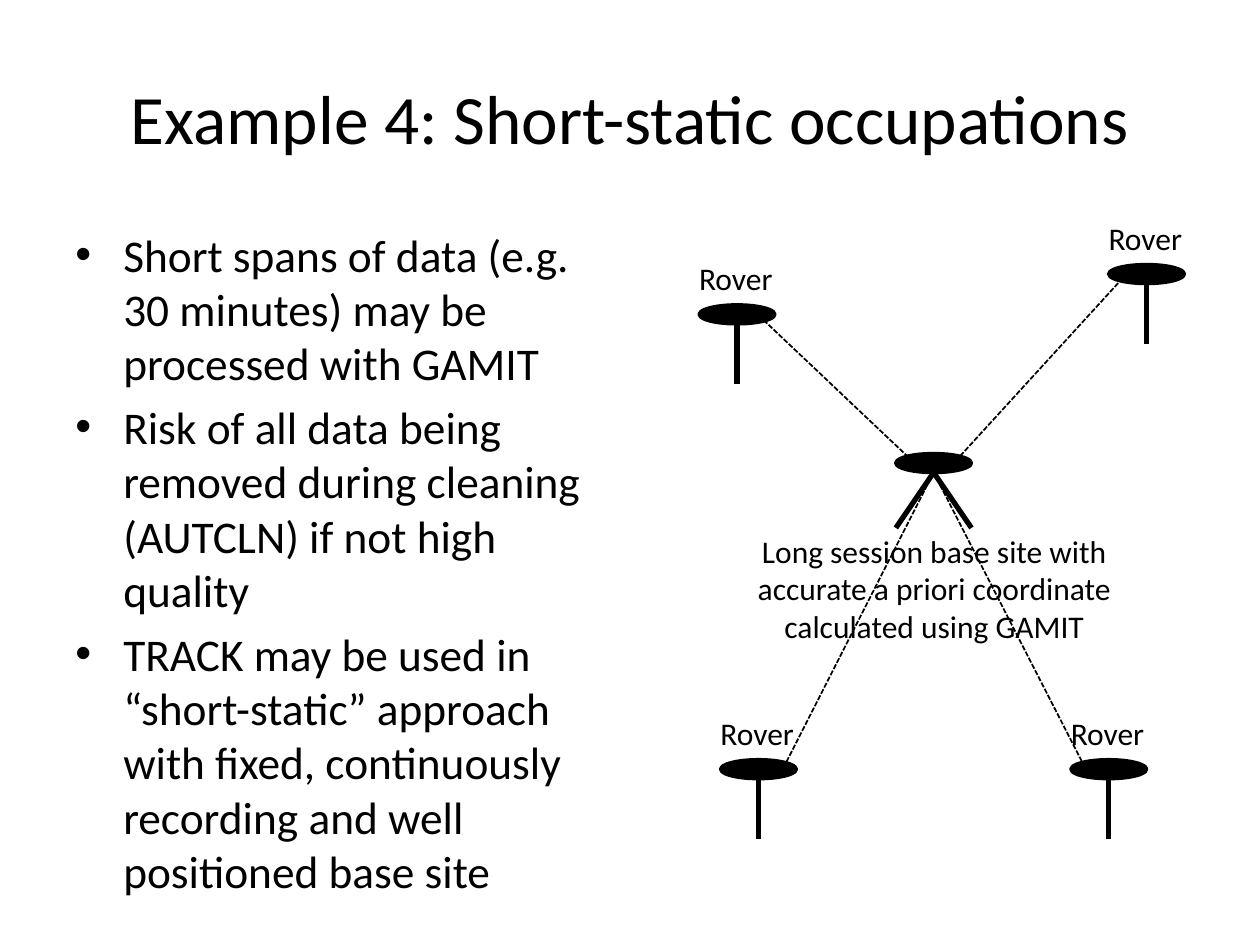
from lxml import etree
from pptx import Presentation
from pptx.dml.color import RGBColor
from pptx.enum import dml, shapes, text
from pptx.oxml.ns import qn
from pptx.util import Inches, Pt

BLACK = RGBColor.from_string("000000")
DISC_WIDTH, DISC_HEIGHT = 0.6, 0.15


def style_text(paragraph, size, align):
    paragraph.alignment = align
    for span in paragraph.runs:
        span.font.name = "Calibri"
        span.font.size = Pt(size)
        span.font.color.rgb = BLACK


def add_line(parent, start, end, width):
    line = parent.add_connector(
        shapes.MSO_CONNECTOR.STRAIGHT, *[Inches(n) for n in (*start, *end)])
    line.line.color.rgb = BLACK
    line.line.width = Pt(width)
    etree.SubElement(line._element.spPr, qn("a:effectLst"))
    return line


deck = Presentation()
deck.slide_width, deck.slide_height = Inches(10), Inches(7.5)
page = deck.slides.add_slide(deck.slide_layouts[5])

title = page.shapes.title
title.left, title.top = Inches(0.5), Inches(0.3)
title.width, title.height = Inches(9), Inches(1.25)
title.text_frame.text = "Example 4: Short-static occupations"
title.text_frame.vertical_anchor = text.MSO_ANCHOR.MIDDLE
style_text(title.text_frame.paragraphs[0], 39.6, text.PP_ALIGN.CENTER)

points = [
    "Short spans of data (e.g. 30 minutes) may be processed with GAMIT",
    "Risk of all data being removed during cleaning (AUTCLN) if not high quality",
    "TRACK may be used in “short-static” approach with fixed, continuously "
    "recording and well positioned base site",
]
body = page.shapes.add_textbox(Inches(0.5), Inches(1.75), Inches(4.42), Inches(4.95))
body.text_frame.word_wrap = True
body.text_frame.text = "\n".join(points)
for index, paragraph in enumerate(body.text_frame.paragraphs):
    properties = paragraph._p.get_or_add_pPr()
    properties.set("marL", str(Inches(0.38)))
    properties.set("indent", str(-Inches(0.38)))
    etree.SubElement(properties, qn("a:buFont"), typeface="Arial")
    etree.SubElement(properties, qn("a:buChar"), char="•")
    if index:
        paragraph.space_before = Pt(5.2)
    style_text(paragraph, 25.9, text.PP_ALIGN.LEFT)

# Each station: centre x, disc top, ends of its legs relative to the disc bottom
base_x, base_top = 7.41, 3.6
rovers = [(5.85, 2.42), (9.1, 2.1), (8.8, 6.03), (6.02, 6.03)]
stations = [(base_x, base_top, [(0.3, 0.44), (-0.3, 0.44)])]
stations += [(x, top, [(0, 0.48)]) for x, top in rovers]

for x, top, legs in stations:
    station = page.shapes.add_group_shape().shapes
    disc = station.add_shape(
        shapes.MSO_SHAPE.OVAL, Inches(x - DISC_WIDTH / 2), Inches(top),
        Inches(DISC_WIDTH), Inches(DISC_HEIGHT))
    disc.shadow.inherit = False
    disc.fill.solid()
    disc.fill.fore_color.rgb = BLACK
    disc.line.color.rgb = BLACK
    disc.line.width = Pt(2)
    bottom = top + DISC_HEIGHT
    for across, down in legs:
        add_line(station, (x, bottom), (x + across, bottom + down), 3)

    if (x, top) in rovers:
        label = station.add_textbox(
            Inches(x - 0.4), Inches(top - 0.41), Inches(0.8), Inches(0.4))
        label.text_frame.word_wrap = False
        label.text_frame.text = "Rover"
        style_text(label.text_frame.paragraphs[0], 18, text.PP_ALIGN.LEFT)
    else:
        label = page.shapes.add_textbox(
            Inches(5.85), Inches(4.17), Inches(3.13), Inches(1.01))
        label.text_frame.word_wrap = True
        label.text_frame.text = ("Long session base site with accurate a priori "
                                 "coordinate calculated using GAMIT")
        style_text(label.text_frame.paragraphs[0], 18, text.PP_ALIGN.CENTER)
    label.text_frame.auto_size = text.MSO_AUTO_SIZE.SHAPE_TO_FIT_TEXT

base_bottom = (base_x, base_top + DISC_HEIGHT)
baselines = [
    ((6.06, 2.54), (7.2, 3.62)),
    ((7.62, 3.62), (8.89, 2.23)),
    (base_bottom, (8.59, 6.05)),
    (base_bottom, (6.24, 6.05)),
]
for start, end in baselines:
    baseline = add_line(page.shapes, start, end, 1)
    baseline.line.dash_style = dml.MSO_LINE.SQUARE_DOT

deck.save("out.pptx")
